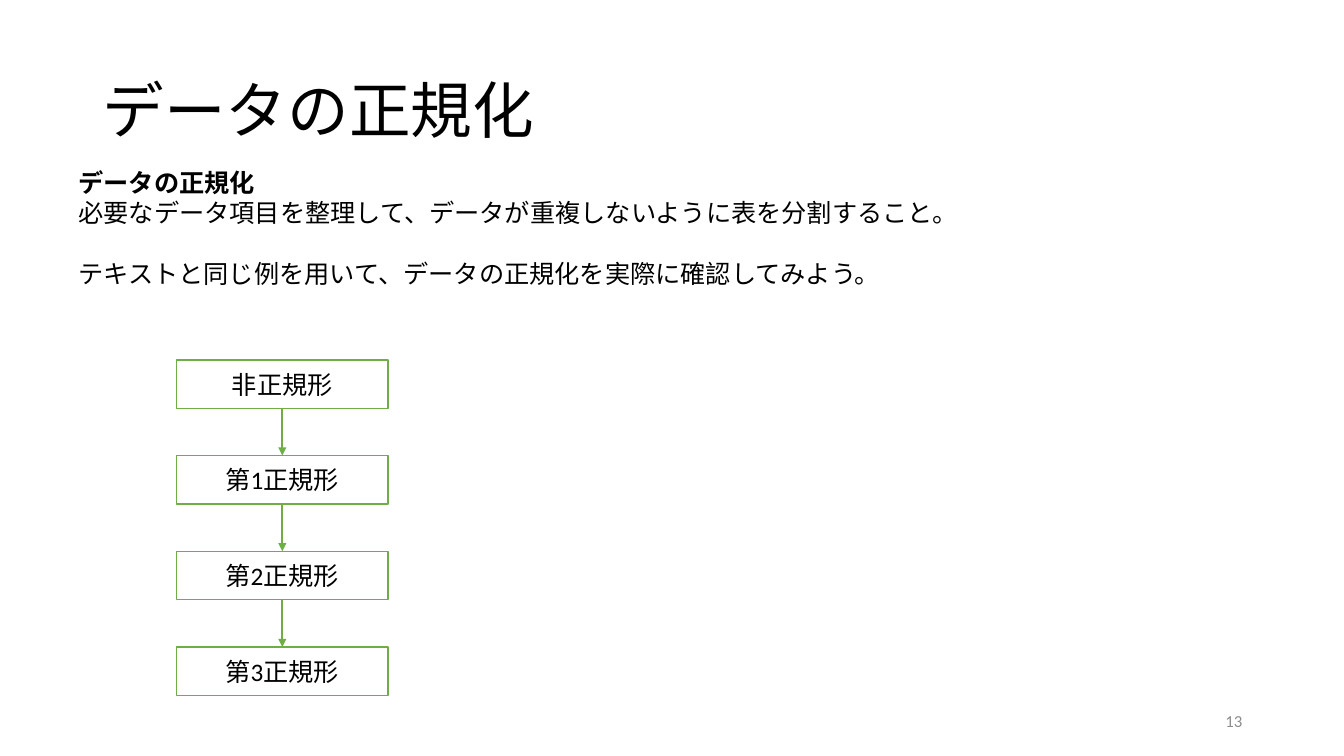
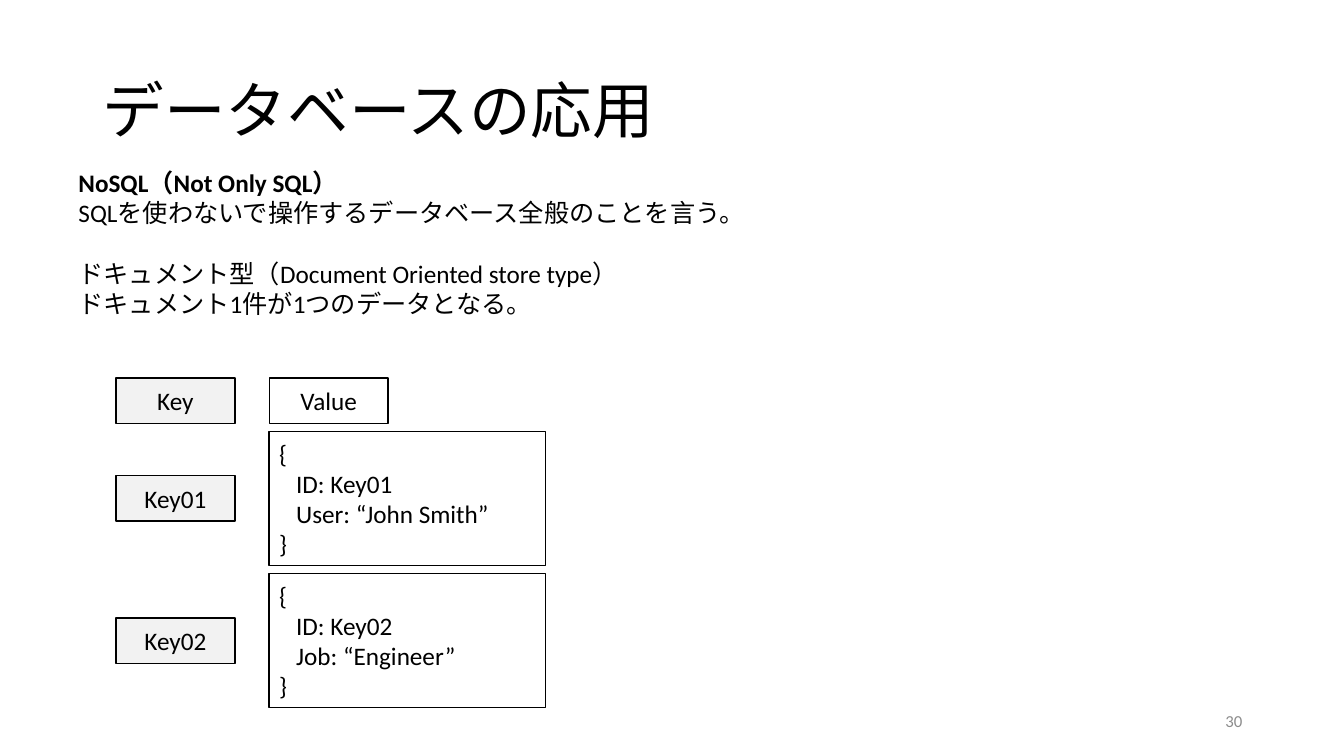
from lxml import etree
from pptx import Presentation
from pptx.dml.color import RGBColor
from pptx.enum.shapes import MSO_CONNECTOR, MSO_SHAPE
from pptx.enum.text import MSO_ANCHOR, PP_ALIGN
from pptx.oxml.ns import qn
from pptx.util import Inches, Pt

RECT, STRAIGHT = MSO_SHAPE.RECTANGLE, MSO_CONNECTOR.STRAIGHT
TOP, MIDDLE = MSO_ANCHOR.TOP, MSO_ANCHOR.MIDDLE
LEFT, CENTER, RIGHT = PP_ALIGN.LEFT, PP_ALIGN.CENTER, PP_ALIGN.RIGHT

FONT = "Calibri"
BLACK, WHITE, GRAY, PALE, GREEN = "000000", "FFFFFF", "8C8C8C", "F2F2F2", "70AD47"
BODY_SIZE = 18
BLOCK_GAP = 22

# Body text: blocks of lines, the very first line is the bold heading
NORMALIZATION = {
    "title": "データの正規化",
    "number": "13",
    "blocks": [
        ["データの正規化",
         "必要なデータ項目を整理して、データが重複しないように表を分割すること。"],
        ["テキストと同じ例を用いて、データの正規化を実際に確認してみよう。"],
    ],
}
NORMAL_FORMS = ["非正規形", "第1正規形", "第2正規形", "第3正規形"]

NOSQL = {
    "title": "データベースの応用",
    "number": "30",
    "blocks": [
        ["NoSQL（Not Only SQL）",
         "SQLを使わないで操作するデータベース全般のことを言う。"],
        ["ドキュメント型（Document Oriented store type）",
         "ドキュメント1件が1つのデータとなる。"],
    ],
}
HEADERS = ("Key", "Value")
DOCUMENTS = [
    ("Key01", ["{", "   ID: Key01", "   User: “John Smith”", "}"]),
    ("Key02", ["{", "   ID: Key02", "   Job: “Engineer”", "}"]),
]


def rgb(value):
    return RGBColor.from_string(value)


def write(shape, lines, size=BODY_SIZE, color=BLACK, align=LEFT, anchor=TOP):
    tf = shape.text_frame
    tf.word_wrap = True
    tf.vertical_anchor = anchor
    tf.text = "\n".join(lines)
    for p in tf.paragraphs:
        p.alignment = align
        for r in p.runs:
            r.font.name = FONT
            r.font.size = Pt(size)
            r.font.color.rgb = rgb(color)
    return tf.paragraphs


def add_text(s, box, lines, **style):
    return write(s.shapes.add_textbox(*map(Inches, box)), lines, **style)


def add_box(s, box, lines, fill=WHITE, line=BLACK, align=CENTER):
    shape = s.shapes.add_shape(RECT, *map(Inches, box))
    shape.shadow.inherit = False
    shape.fill.solid()
    shape.fill.fore_color.rgb = rgb(fill)
    shape.line.color.rgb = rgb(line)
    shape.line.width = Pt(1)
    write(shape, lines, align=align, anchor=MIDDLE)
    return shape


def add_arrow(s, upper, lower):
    """Join the bottom of one box to the top of the next."""
    arrow = s.shapes.add_connector(STRAIGHT, 0, 0, 0, 0)
    arrow.begin_connect(upper, 2)
    arrow.end_connect(lower, 0)
    arrow.line.color.rgb = rgb(GREEN)
    arrow.line.width = Pt(1.5)
    etree.SubElement(arrow.line._get_or_add_ln(), qn("a:tailEnd"), type="triangle")
    etree.SubElement(arrow._element.spPr, qn("a:effectLst"))


def add_slide(prs, content):
    """Add a slide with its title, page number and body text."""
    s = prs.slides.add_slide(prs.slide_layouts[6])
    title = add_text(s, (0.92, 0.4, 11.5, 1.45), [content["title"]], size=44, anchor=MIDDLE)
    title[0].line_spacing = 0.9
    add_text(s, (9.42, 6.95, 3, 0.4), [content["number"]],
             size=12, color=GRAY, align=RIGHT, anchor=MIDDLE)

    blocks = content["blocks"]
    lines = sum(blocks, [])
    body = add_text(s, (0.68, 1.61, 11.99, 0.1 + 0.3 * (len(lines) + 1)), lines)
    body[0].runs[0].font.bold = True
    start = 0
    for block in blocks[:-1]:
        start += len(block)
        body[start].space_before = Pt(BLOCK_GAP)
    return s


def add_normal_forms(s):
    left, top, width, height, pitch = 1.75, 3.57, 2.1, 0.48, 0.95
    boxes = [add_box(s, (left, top + i * pitch, width, height), [name], line=GREEN)
             for i, name in enumerate(NORMAL_FORMS)]
    for upper, lower in zip(boxes, boxes[1:]):
        add_arrow(s, upper, lower)


def add_documents(s):
    key_left, value_left, top = 1.15, 2.67, 3.75
    width, height = 1.18, 0.45
    doc_width, doc_height, gap = 2.74, 1.33, 0.08
    key, value = HEADERS
    add_box(s, (key_left, top, width, height), [key], fill=PALE)
    add_box(s, (value_left, top, width, height), [value])
    for i, (key, lines) in enumerate(DOCUMENTS):
        doc_top = top + height + gap + i * (doc_height + gap)
        key_top = doc_top + (doc_height - height) / 2
        add_box(s, (key_left, key_top, width, height), [key], fill=PALE)
        add_box(s, (value_left, doc_top, doc_width, doc_height), lines, align=LEFT)


def main():
    prs = Presentation()
    prs.slide_width, prs.slide_height = Inches(13.33), Inches(7.5)
    add_normal_forms(add_slide(prs, NORMALIZATION))
    add_documents(add_slide(prs, NOSQL))
    prs.save("out.pptx")


if __name__ == "__main__":
    main()
